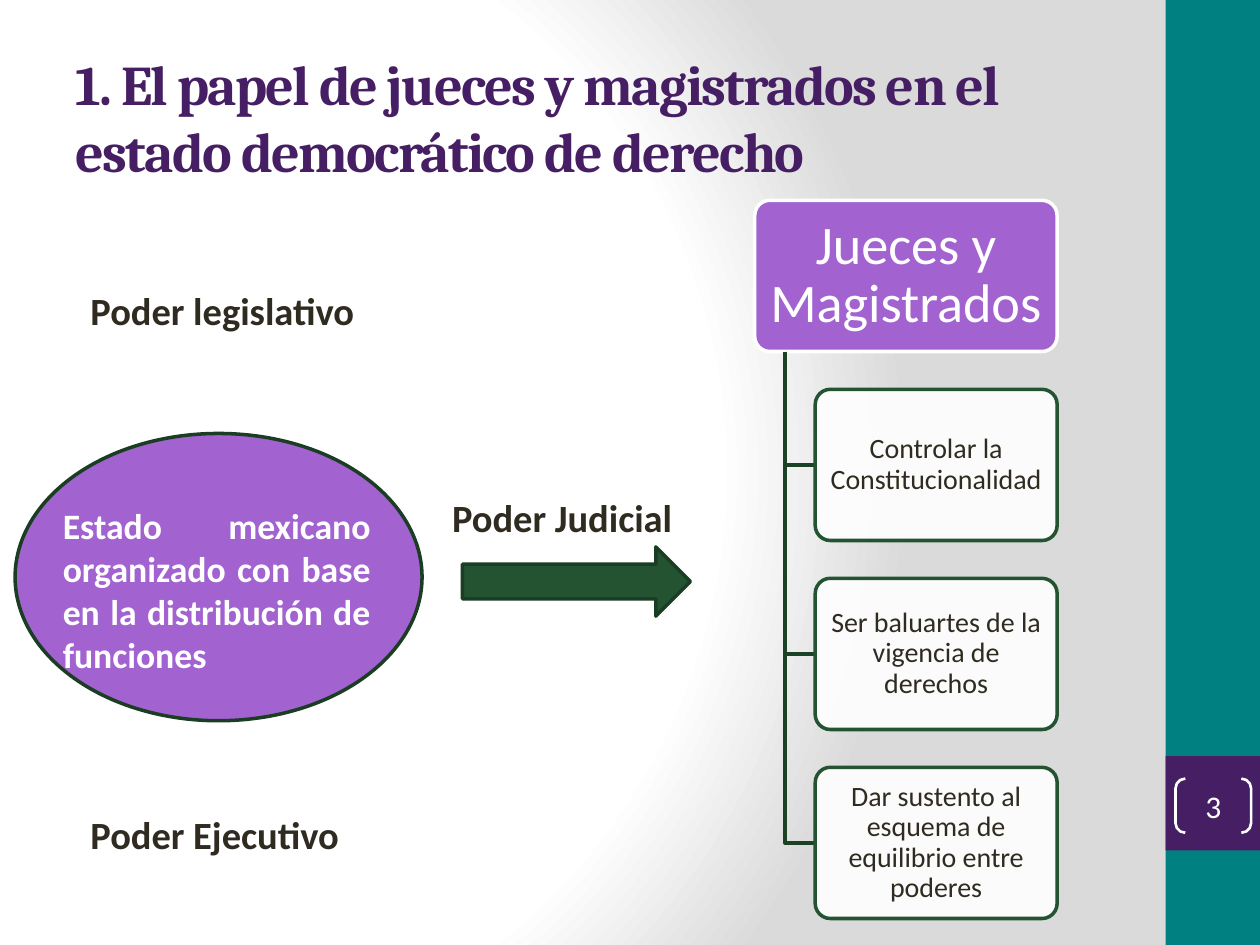
"""Build a slide on the role of judges and magistrates."""
import pptx
import pptx.util
import pptx.dml.color
import pptx.enum.shapes
import pptx.enum.text
import pptx.oxml

Inches, Pt = pptx.util.Inches, pptx.util.Pt
KIND = pptx.enum.shapes.MSO_SHAPE
ALIGN = pptx.enum.text.PP_ALIGN
MIDDLE = pptx.enum.text.MSO_ANCHOR.MIDDLE
NS = "http://schemas.openxmlformats.org/drawingml/2006/main"

TITLE = "1. El papel de jueces y magistrados en el estado democrático de derecho"
HEAD = "Jueces y Magistrados"
DUTIES = [
    "Controlar la Constitucionalidad",
    "Ser baluartes de la vigencia de derechos",
    "Dar sustento al esquema de equilibrio entre poderes",
]
STATE = "Estado mexicano organizado con base en la distribución de funciones"
POWERS = [
    ("Poder Judicial", 3.37, 3.87),
    ("Poder legislativo", 0.5, 2.23),
    ("Poder Ejecutivo", 0.5, 6.39),
]
PURPLE, PLUM, TEAL = "A263D0", "461E63", "008080"
GREEN, DARK, EDGE = "235330", "1A3D24", "1C4226"
WHITE, INK = "FFFFFF", "2F2B20"
STOPS = [(0, WHITE), (75, WHITE), (100, "DADADA")]


def color(code):
    return pptx.dml.color.RGBColor.from_string(code)


def place(shape, box):
    shape.left, shape.top, shape.width, shape.height = map(Inches, box)


def paint(shape, fill=None, line=None, width=2):
    shape.shadow.inherit = False
    if fill:
        shape.fill.solid()
        shape.fill.fore_color.rgb = color(fill)
    else:
        shape.fill.background()
    if line:
        shape.line.color.rgb = color(line)
        shape.line.width = Pt(width)
    else:
        shape.line.fill.background()


def draw(kind, box, fill=None, line=None, width=2, adj=None):
    shape = slide.shapes.add_shape(kind, *map(Inches, box))
    paint(shape, fill, line, width)
    if adj is not None:
        shape.adjustments[0] = adj
    return shape


def write(shape, text, size, ink, align, bold=False, face="Calibri"):
    frame = shape.text_frame
    frame.word_wrap = True
    frame.text = text
    para = frame.paragraphs[0]
    para.alignment = align
    font = para.font
    font.size, font.name, font.bold = Pt(size), face, bold
    font.color.rgb = color(ink)
    return para


def center(shape, text, size, ink, side=0, edge=0):
    frame = shape.text_frame
    frame.vertical_anchor = MIDDLE
    frame.margin_left = frame.margin_right = Inches(side)
    frame.margin_top = frame.margin_bottom = Inches(edge)
    return write(shape, text, size, ink, ALIGN.CENTER)


def label(text, box, size, ink):
    shape = slide.shapes.add_textbox(*map(Inches, box))
    para = write(shape, text, size, ink, ALIGN.JUSTIFY, True)
    para.space_before = Pt(round(size * 0.2, 1))
    para._p.get_or_add_pPr().set("marL", str(Inches(0.12)))


def shade():
    """Give the slide its round grey gradient."""
    fill = slide.background.fill
    fill.gradient()
    stops = "".join(
        f'<a:gs pos="{pos * 1000}"><a:srgbClr val="{code}"/></a:gs>'
        for pos, code in STOPS)
    new = pptx.oxml.parse_xml(
        f'<a:gradFill xmlns:a="{NS}" rotWithShape="1"><a:gsLst>{stops}</a:gsLst>'
        '<a:path path="circle"><a:fillToRect l="20000" t="50000" r="100000" '
        'b="50000"/></a:path></a:gradFill>')
    old = slide.background._cSld.find(f".//{{{NS}}}gradFill")
    old.getparent().replace(old, new)


def tree():
    """Draw the head box and the duties that hang from it."""
    left, top, wide, high, step = 5.99, 1.59, 2.4, 1.2, 1.5
    stem, near = left + wide * 0.1, left + wide * 0.2
    box = draw(KIND.ROUNDED_RECTANGLE, (left, top, wide, high), PURPLE, WHITE, adj=0.1)
    center(box, HEAD, 31, WHITE, 0.06, 0.04).line_spacing = 0.9
    for row, duty in enumerate(DUTIES, 1):
        y = top + row * step
        mid = y + high / 2
        path = slide.shapes.build_freeform(Inches(stem), Inches(top + high))
        path.add_line_segments(
            [(Inches(stem), Inches(mid)), (Inches(near), Inches(mid))], close=False)
        paint(path.convert_to_shape(), line=EDGE)
        box = draw(KIND.ROUNDED_RECTANGLE, (near, y, wide * 0.8, high), WHITE, GREEN, adj=0.1)
        tone = box._element.spPr.find(f"{{{NS}}}solidFill")[0]
        tone.append(pptx.oxml.parse_xml(f'<a:alpha xmlns:a="{NS}" val="90000"/>'))
        center(box, duty, 16, INK, 0.03, 0.02).line_spacing = 0.9


deck = pptx.Presentation()
deck.slide_width, deck.slide_height = Inches(10), Inches(7.5)
slide = deck.slides.add_slide(deck.slide_layouts[5])
shade()

draw(KIND.RECTANGLE, (9.25, 0, 0.75, 7.5), TEAL)
draw(KIND.RECTANGLE, (9.25, 6, 0.75, 0.75), PLUM)
draw(KIND.OVAL, (0.12, 3.44, 3.23, 2.28), PURPLE, DARK)

title = slide.shapes.title
place(title, (0.5, 0.3, 8.33, 1.25))
title.text_frame.vertical_anchor = MIDDLE
title.text_frame.auto_size = pptx.enum.text.MSO_AUTO_SIZE.NONE
head = write(title, TITLE, 32, PLUM, ALIGN.LEFT, True, "Cambria")
head.runs[0]._r.get_or_add_rPr().set("spc", "-100")

page = draw(KIND.DOUBLE_BRACKET, (9.33, 6.18, 0.6, 0.43), None, WHITE, 1.5, 0.18)
center(page, "3", 18, WHITE)

tree()
label(STATE, (0.28, 3.95, 2.76, 1.34), 20.4, WHITE)
draw(KIND.RIGHT_ARROW, (3.67, 4.34, 1.81, 0.55), GREEN, DARK)
for text, x, y in POWERS:
    label(text, (x, y, 2.76, 0.47), 22, INK)

deck.save("out.pptx")
